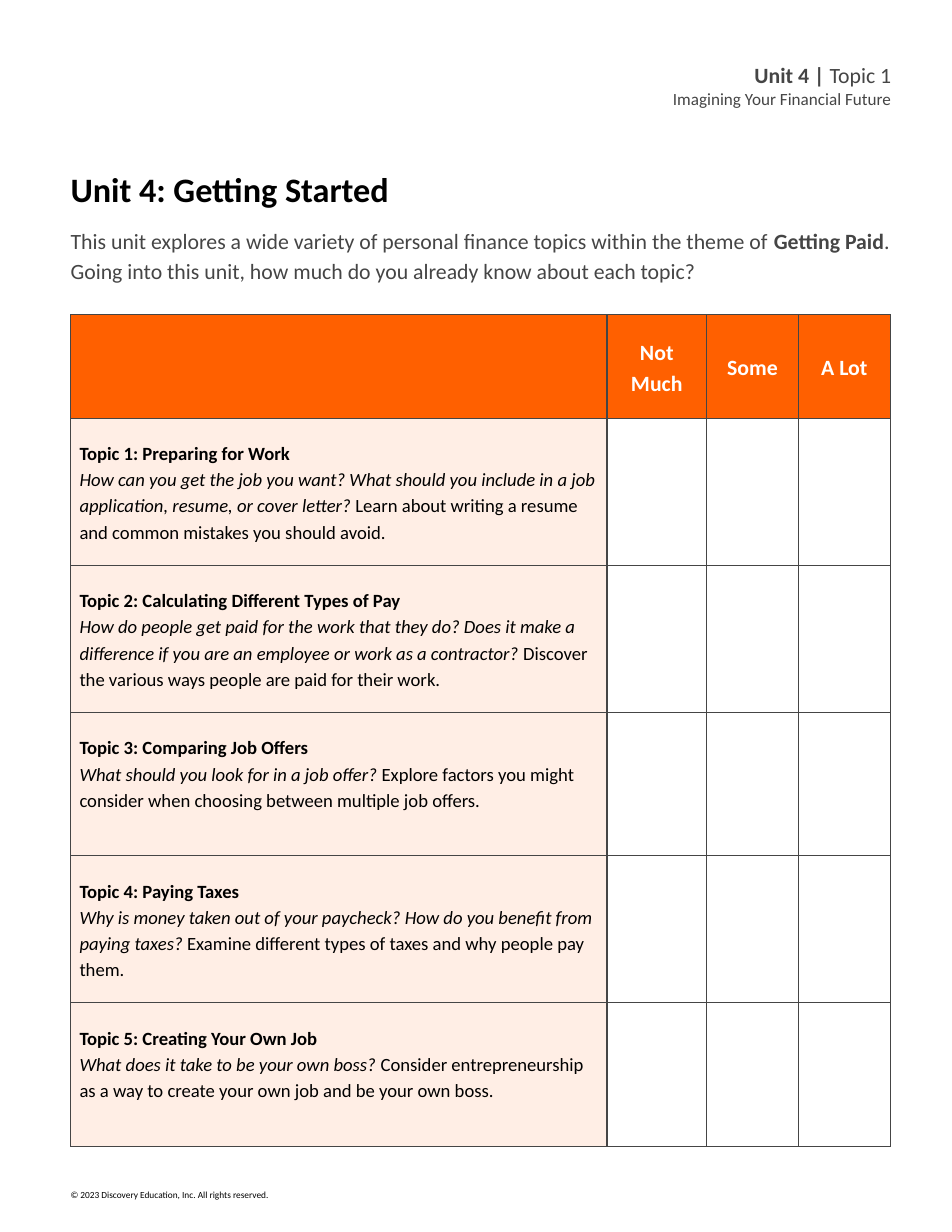
from lxml.etree import SubElement
from pptx import Presentation
from pptx.dml.color import RGBColor
from pptx.enum.text import MSO_ANCHOR, MSO_AUTO_SIZE, PP_ALIGN
from pptx.oxml.ns import qn
from pptx.util import Inches, Pt

FONT = "Calibri"
ORANGE, GRAY, BLACK, WHITE = "FF6000", "454545", "000000", "FFFFFF"
LEFT = 0.63
COLUMN_WIDTHS = [4.79, 0.89, 0.82, 0.82]
ROW_HEIGHTS = [0.89] + [1.28] * 5
RATINGS = ["Not Much", "Some", "A Lot"]
TOPICS = [
    ("Topic 1: Preparing for Work",
     "How can you get the job you want? What should you include in a job application, resume, or cover letter? ",
     "Learn about writing a resume and common mistakes you should avoid."),
    ("Topic 2: Calculating Different Types of Pay",
     "How do people get paid for the work that they do? Does it make a difference if you are an employee or work as a contractor? ",
     "Discover the various ways people are paid for their work."),
    ("Topic 3: Comparing Job Offers",
     "What should you look for in a job offer? ",
     "Explore factors you might consider when choosing between multiple job offers."),
    ("Topic 4: Paying Taxes",
     "Why is money taken out of your paycheck? How do you benefit from paying taxes? ",
     "Examine different types of taxes and why people pay them."),
    ("Topic 5: Creating Your Own Job",
     "What does it take to be your own boss? ",
     "Consider entrepreneurship as a way to create your own job and be your own boss."),
]


def color(value):
    """Turn a hex string into a colour."""
    return RGBColor.from_string(value)


def add_run(paragraph, text, size, ink, bold=False, italic=False):
    """Append one formatted run to a paragraph."""
    run = paragraph.add_run()
    run.text = text
    run.font.name = FONT
    run.font.size = Pt(size)
    run.font.bold = bold
    run.font.italic = italic
    run.font.color.rgb = color(ink)


def format_paragraph(paragraph, alignment=PP_ALIGN.LEFT, line_spacing=1.15):
    """Set the alignment and spacing of a paragraph."""
    paragraph.alignment = alignment
    paragraph.line_spacing = line_spacing
    paragraph.space_before = Pt(0)


def prepare_frame(shape, left, top, width, height, anchor=MSO_ANCHOR.TOP):
    """Place a text shape, clear its margins and return its text frame."""
    shape.left, shape.top = Inches(left), Inches(top)
    shape.width, shape.height = Inches(width), Inches(height)
    frame = shape.text_frame
    frame.margin_left = frame.margin_right = 0
    frame.margin_top = frame.margin_bottom = 0
    frame.word_wrap = True
    frame.auto_size = MSO_AUTO_SIZE.NONE
    frame.vertical_anchor = anchor
    return frame


def add_text_frame(slide, *box, anchor=MSO_ANCHOR.TOP):
    """Add a text box and return its prepared text frame."""
    lengths = [Inches(length) for length in box]
    return prepare_frame(slide.shapes.add_textbox(*lengths), *box, anchor=anchor)


def add_header(slide):
    """Add the unit and topic lines at the top right."""
    frame = add_text_frame(slide, 3.93, 0.55, 4.03, 0.42, anchor=MSO_ANCHOR.MIDDLE)
    unit, topic = frame.paragraphs[0], frame.add_paragraph()
    for paragraph in (unit, topic):
        format_paragraph(paragraph, PP_ALIGN.RIGHT, 1)
    add_run(unit, "Unit 4 | ", 14, GRAY, bold=True)
    add_run(unit, "Topic 1", 14, GRAY)
    add_run(topic, "Imagining Your Financial Future", 11, GRAY)


def add_copyright(slide):
    """Add the copyright line at the bottom left."""
    paragraph = add_text_frame(slide, LEFT, 10.6, 3.4, 0.1).paragraphs[0]
    format_paragraph(paragraph, PP_ALIGN.JUSTIFY)
    add_run(paragraph, "© 2023 Discovery Education, Inc. All rights reserved.", 6, BLACK)


def fill_title(slide):
    """Write the slide title."""
    paragraph = prepare_frame(slide.shapes.title, LEFT, 1.5, 7.25, 0.36).paragraphs[0]
    format_paragraph(paragraph, line_spacing=1)
    add_run(paragraph, "Unit 4: Getting Started", 22, BLACK, bold=True)


def fill_introduction(slide):
    """Write the introduction in the body placeholder without a bullet."""
    paragraph = prepare_frame(slide.placeholders[1], LEFT, 2, 7.46, 0.81).paragraphs[0]
    format_paragraph(paragraph)
    paragraph.space_after = Pt(12)
    properties = paragraph._p.get_or_add_pPr()
    properties.set("marL", "0")
    properties.set("indent", "0")
    SubElement(properties, qn("a:buNone"))
    add_run(paragraph, "This unit explores a wide variety of personal finance topics within the theme of ", 14, GRAY)
    add_run(paragraph, "Getting Paid", 14, GRAY, bold=True)
    add_run(paragraph, ". Going into this unit, how much do you already know about each topic?", 14, GRAY)


def add_borders(cell):
    """Draw a thin line on every side of a cell."""
    properties = cell._tc.get_or_add_tcPr()
    for position, side in enumerate(("a:lnL", "a:lnR", "a:lnT", "a:lnB")):
        line = SubElement(properties, qn(side), w=str(Pt(0.75)))
        properties.insert(position, line)
        fill = SubElement(line, qn("a:solidFill"))
        SubElement(fill, qn("a:srgbClr"), val=GRAY)


def fill_cell(cell, opacity=100):
    """Fill a cell with orange at the given opacity in percent."""
    cell.fill.solid()
    cell.fill.fore_color.rgb = color(ORANGE)
    if opacity < 100:
        shade = cell._tc.tcPr.find(qn("a:solidFill")).find(qn("a:srgbClr"))
        SubElement(shade, qn("a:alpha"), val=str(opacity * 1000))


def write_rating(cell, rating):
    """Write a centred rating heading."""
    cell.vertical_anchor = MSO_ANCHOR.MIDDLE
    paragraph = cell.text_frame.paragraphs[0]
    format_paragraph(paragraph, PP_ALIGN.CENTER)
    add_run(paragraph, rating, 14, WHITE, bold=True)


def write_topic(cell, name, question, summary):
    """Write a topic name above its question and summary."""
    heading = cell.text_frame.paragraphs[0]
    description = cell.text_frame.add_paragraph()
    for paragraph in (heading, description):
        format_paragraph(paragraph)
    add_run(heading, name, 12, BLACK, bold=True)
    add_run(description, question, 12, BLACK, italic=True)
    add_run(description, summary, 12, BLACK)


def add_topic_table(slide):
    """Add the table for rating each topic."""
    table = slide.shapes.add_table(
        len(ROW_HEIGHTS), len(COLUMN_WIDTHS), Inches(LEFT), Inches(2.81),
        Inches(sum(COLUMN_WIDTHS)), Inches(sum(ROW_HEIGHTS))).table
    table.first_row = table.horz_banding = False
    for column, width in zip(table.columns, COLUMN_WIDTHS):
        column.width = Inches(width)
    for row, height in zip(table.rows, ROW_HEIGHTS):
        row.height = Inches(height)
    for cell in table.iter_cells():
        cell.margin_left = cell.margin_right = Inches(0.08)
        cell.margin_top = cell.margin_bottom = Inches(0.19)
        cell.fill.background()
        add_borders(cell)
    for cell in table.rows[0].cells:
        fill_cell(cell)
    for column, rating in enumerate(RATINGS, 1):
        write_rating(table.cell(0, column), rating)
    for row, topic in enumerate(TOPICS, 1):
        fill_cell(table.cell(row, 0), 10)
        write_topic(table.cell(row, 0), *topic)


def main():
    """Build the worksheet and save it."""
    presentation = Presentation()
    presentation.slide_width, presentation.slide_height = Inches(8.5), Inches(11)
    slide = presentation.slides.add_slide(presentation.slide_layouts[1])
    add_header(slide)
    add_copyright(slide)
    fill_title(slide)
    add_topic_table(slide)
    fill_introduction(slide)
    presentation.save("out.pptx")


if __name__ == "__main__":
    main()
